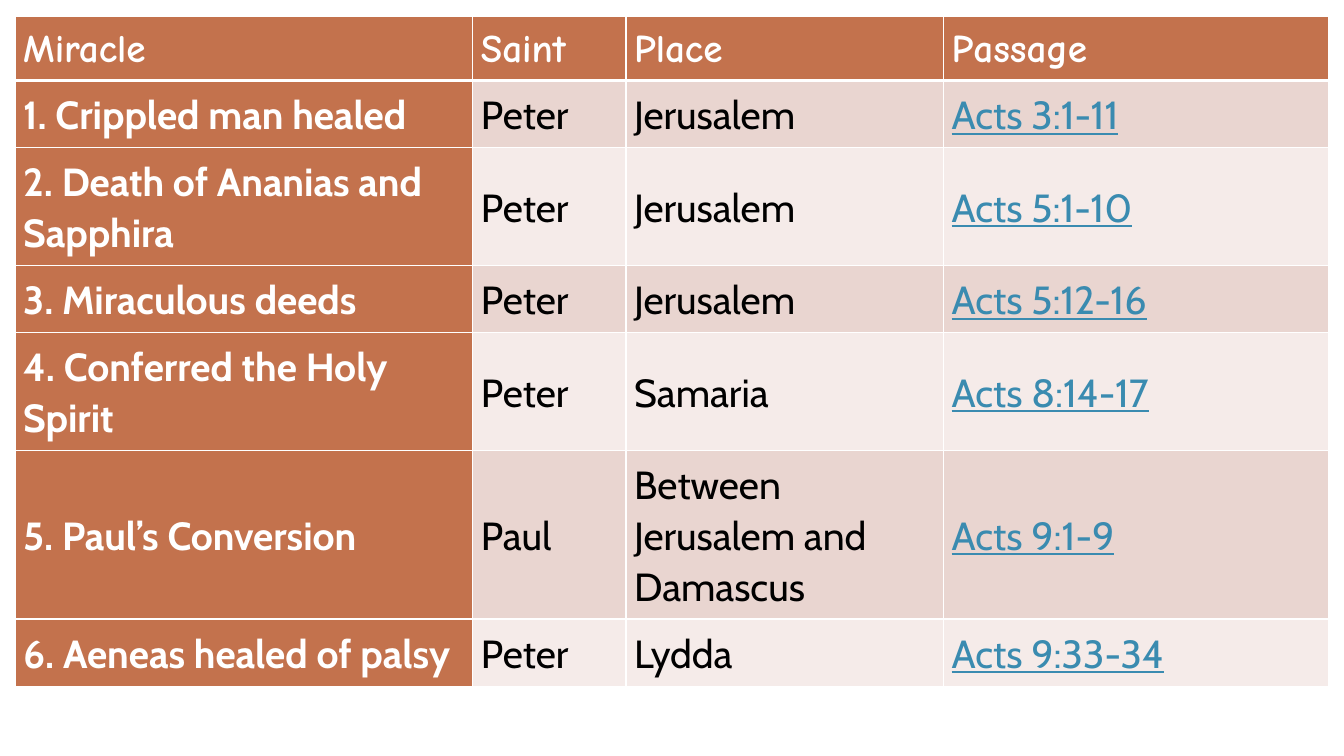
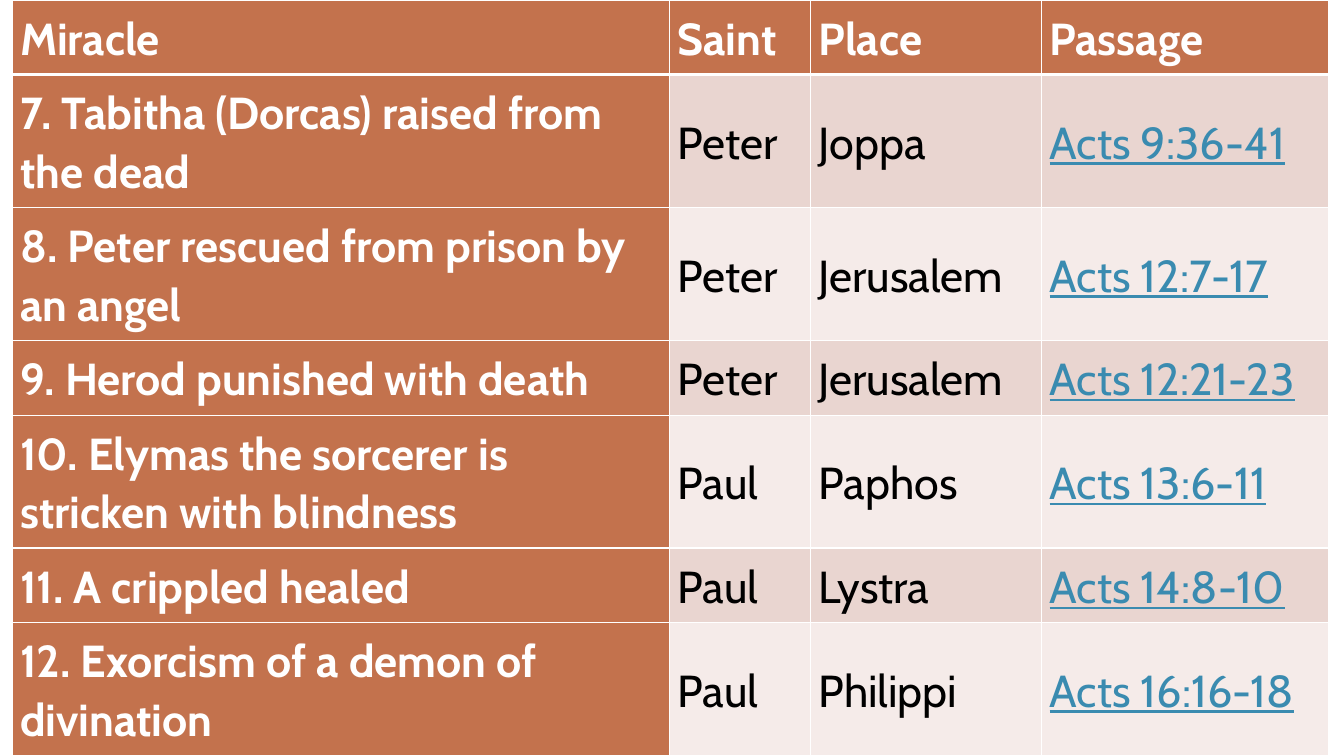
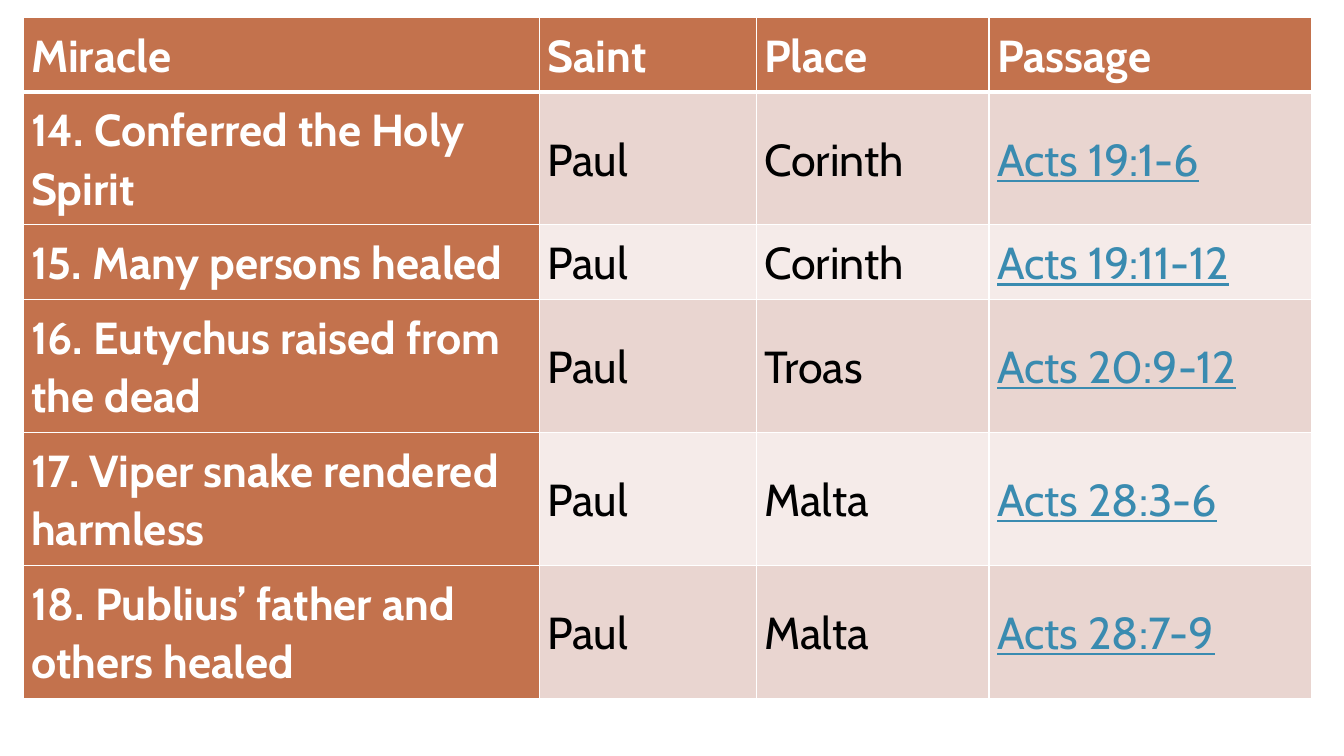
from lxml.etree import SubElement
from pptx import Presentation
from pptx.dml.color import RGBColor
from pptx.enum.text import MSO_ANCHOR
from pptx.oxml.ns import qn
from pptx.util import Pt

PX = 9144
COLORS = {
    "clay": "C3724D",
    "band_dark": "E9D5D0",
    "band_light": "F5EBE9",
    "white": "FFFFFF",
    "black": "000000",
    "passage": "3A8BB0",
}
BODY_FONT = "Cabin"
HEADINGS = ("Miracle", "Saint", "Place", "Passage")
INSET = 8

PAGES = [
    {
        "box": (15, 16, 1303, 704),
        "columns": (454, 152, 315, 382),
        "row_height": 60,
        "size": 28,
        "heading_font": "Comic Neue",
        "miracles": [
            ("1. Crippled man healed", "Peter", "Jerusalem", "Acts 3:1-11"),
            ("2. Death of Ananias and Sapphira", "Peter", "Jerusalem", "Acts 5:1-10"),
            ("3. Miraculous deeds", "Peter", "Jerusalem", "Acts 5:12-16"),
            ("4. Conferred the Holy Spirit", "Peter", "Samaria", "Acts 8:14-17"),
            ("5. Paul’s Conversion", "Paul", "Between Jerusalem and Damascus", "Acts 9:1-9"),
            ("6. Aeneas healed of palsy", "Peter", "Lydda", "Acts 9:33-34"),
        ],
    },
    {
        "box": (12, 0, 1306, 731),
        "columns": (652, 140, 229, 285),
        "row_height": 62,
        "size": 32,
        "heading_font": BODY_FONT,
        "miracles": [
            ("7. Tabitha (Dorcas) raised from the dead", "Peter", "Joppa", "Acts 9:36-41"),
            ("8. Peter rescued from prison by an angel", "Peter", "Jerusalem", "Acts 12:7-17"),
            ("9. Herod punished with death", "Peter", "Jerusalem", "Acts 12:21-23"),
            ("10. Elymas the sorcerer is stricken with blindness", "Paul", "Paphos", "Acts 13:6-11"),
            ("11. A crippled healed", "Paul", "Lystra", "Acts 14:8-10"),
            ("12. Exorcism of a demon of divination", "Paul", "Philippi", "Acts 16:16-18"),
        ],
    },
    {
        "box": (23, 17, 1278, 716),
        "columns": (512, 215, 231, 320),
        "row_height": 62,
        "size": 32,
        "heading_font": BODY_FONT,
        "miracles": [
            ("14. Conferred the Holy Spirit", "Paul", "Corinth", "Acts 19:1-6"),
            ("15. Many persons healed", "Paul", "Corinth", "Acts 19:11-12"),
            ("16. Eutychus raised from the dead", "Paul", "Troas", "Acts 20:9-12"),
            ("17. Viper snake rendered harmless", "Paul", "Malta", "Acts 28:3-6"),
            ("18. Publius’ father and others healed", "Paul", "Malta", "Acts 28:7-9"),
        ],
    },
]


def color(name):
    """Return the named colour."""
    return RGBColor.from_string(COLORS[name])


def add_borders(cell, row):
    """Draw white cell borders, thicker between the heading and the body."""
    widths = {
        "a:lnL": 1,
        "a:lnR": 1,
        "a:lnT": 3 if row == 1 else 1,
        "a:lnB": 3 if row == 0 else 1,
    }
    properties = cell._tc.get_or_add_tcPr()
    for tag, width in widths.items():
        line = SubElement(properties, qn(tag), w=str(Pt(width)))
        fill = SubElement(line, qn("a:solidFill"))
        SubElement(fill, qn("a:srgbClr"), val=COLORS["white"])


def fill_cell(cell, text, row, column, size, font_name):
    """Write one cell and style it by its row and column."""
    strong = row == 0 or column == 0
    passage = not strong and column == len(HEADINGS) - 1
    add_borders(cell, row)
    cell.fill.solid()
    band = "band_dark" if row % 2 else "band_light"
    cell.fill.fore_color.rgb = color("clay" if strong else band)
    cell.vertical_anchor = MSO_ANCHOR.MIDDLE
    cell.margin_left = cell.margin_right = INSET * PX
    cell.margin_top = cell.margin_bottom = INSET * PX

    para = cell.text_frame.paragraphs[0]
    para.text = text
    para.line_spacing = 1.07
    para.space_after = Pt(8)
    font = para.runs[0].font
    font.name = font_name
    font.size = Pt(size)
    font.bold = strong
    font.underline = passage
    font.color.rgb = color("white" if strong else "passage" if passage else "black")


def add_miracle_table(page, box, columns, row_height, size, heading_font, miracles):
    """Place a table of miracles in the given box."""
    rows = [HEADINGS, *miracles]
    frame = page.shapes.add_table(len(rows), len(columns), *(length * PX for length in box))
    table = frame.table
    table.horz_banding = False
    for column, width in zip(table.columns, columns):
        column.width = width * PX
    for row, texts in enumerate(rows):
        table.rows[row].height = row_height * PX
        font_name = heading_font if row == 0 else BODY_FONT
        for column, text in enumerate(texts):
            fill_cell(table.cell(row, column), text, row, column, size, font_name)
    frame.height = box[3] * PX


def main():
    """Build and save the deck."""
    deck = Presentation()
    deck.slide_width, deck.slide_height = 1333 * PX, 750 * PX
    for content in PAGES:
        page = deck.slides.add_slide(deck.slide_layouts[6])
        add_miracle_table(page, **content)
    deck.save("out.pptx")


if __name__ == "__main__":
    main()
